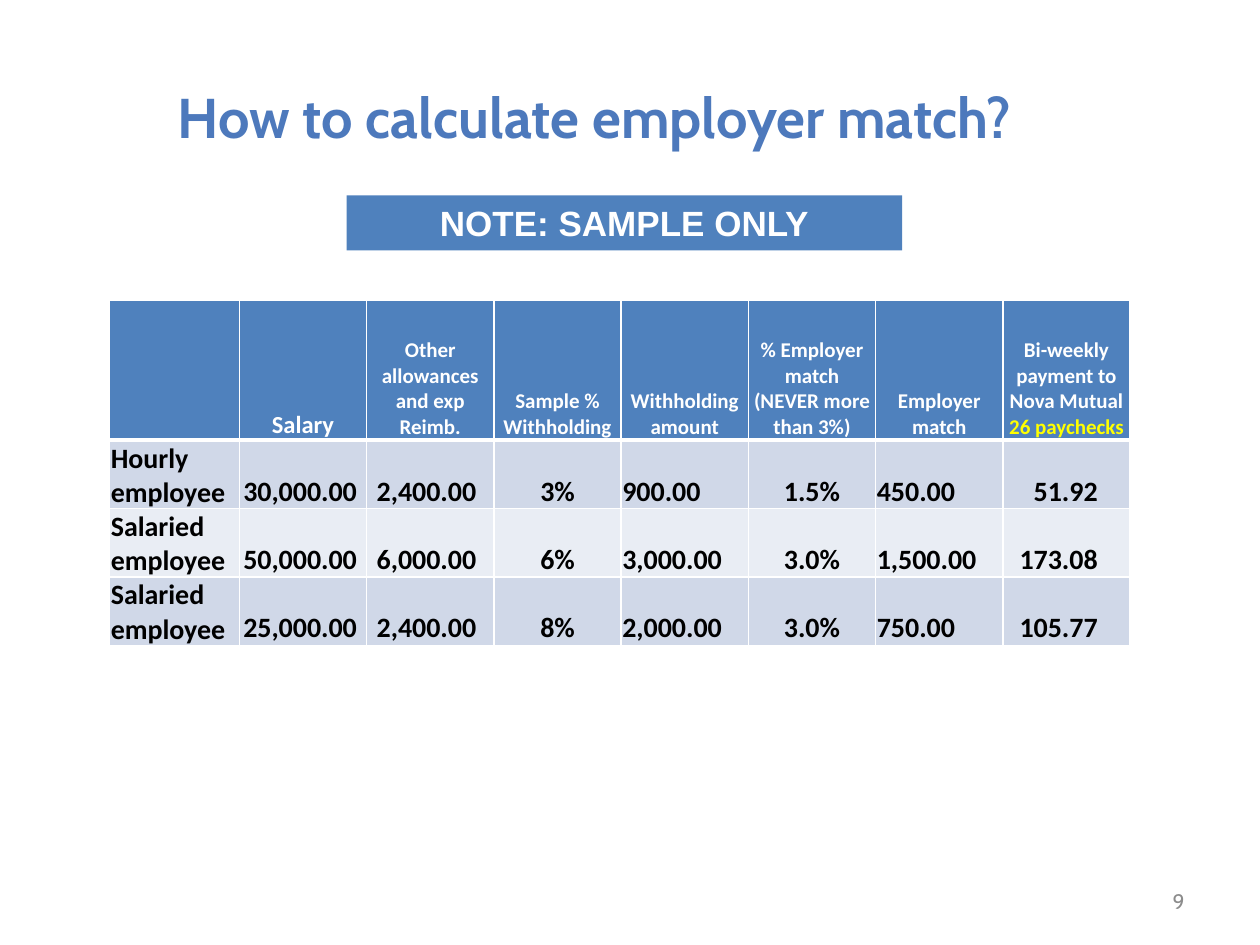
from dataclasses import dataclass

from lxml import etree
from pptx import Presentation
from pptx.dml.color import RGBColor
from pptx.enum import shapes, text
from pptx.oxml.ns import qn
from pptx.util import Pt

LEFT, CENTER, RIGHT = text.PP_ALIGN.LEFT, text.PP_ALIGN.CENTER, text.PP_ALIGN.RIGHT


@dataclass(frozen=True)
class Theme:
    blue: str = "4F81BD"
    title: str = "4D79BC"
    band_dark: str = "D0D8E8"
    band_light: str = "E9EDF4"
    white: str = "FFFFFF"
    black: str = "000000"
    yellow: str = "FFFF00"
    grey: str = "8C8C8C"
    heading_font: str = "Cabin"
    table_font: str = "Calibri"
    note_font: str = "Arial"
    title_size: int = 32
    note_size: int = 20
    body_size: int = 16
    salary_size: int = 14
    header_size: int = 12


@dataclass(frozen=True)
class Box:
    left: float
    top: float
    width: float
    height: float

    def emu(self) -> tuple:
        return Pt(self.left), Pt(self.top), Pt(self.width), Pt(self.height)


@dataclass(frozen=True)
class Style:
    font: str
    size: float
    color: str
    bold: bool = True


@dataclass(frozen=True)
class Column:
    header: str
    values: tuple
    align: int = CENTER
    inset_right: float = 0.72
    header_size: int = 12
    highlight: str = ""


T = Theme()
COLUMNS = [
    Column("", ("Hourly employee", "Salaried\nemployee", "Salaried\nemployee"), LEFT),
    Column("Salary", ("30,000.00", "50,000.00", "25,000.00"), inset_right=4,
           header_size=T.salary_size),
    Column("Other allowances and exp Reimb.", ("2,400.00", "6,000.00", "2,400.00"),
           inset_right=5),
    Column("Sample % Withholding", ("3%", "6%", "8%")),
    Column("Withholding amount", ("900.00", "3,000.00", "2,000.00"), LEFT),
    Column("% Employer match\n(NEVER more than 3%)", ("1.5%", "3.0%", "3.0%")),
    Column("Employer match", ("450.00", "1,500.00", "750.00"), LEFT),
    Column("Bi-weekly\npayment to Nova Mutual ", ("51.92", "173.08", "105.77"), RIGHT,
           inset_right=18.5, highlight="26 paychecks"),
]


def rgb(color: str) -> RGBColor:
    return RGBColor.from_string(color)


def style_run(r, style: Style) -> None:
    r.font.name = style.font
    r.font.size = Pt(style.size)
    r.font.bold = style.bold
    r.font.color.rgb = rgb(style.color)


def write(tf, content: str, style: Style, align: int) -> None:
    tf.text = content
    for p in tf.paragraphs:
        p.alignment = align
        for r in p.runs:
            style_run(r, style)


def add_label(s, box: Box, content: str, style: Style, align: int) -> None:
    tf = s.shapes.add_textbox(*box.emu()).text_frame
    tf.word_wrap = True
    tf.vertical_anchor = text.MSO_ANCHOR.MIDDLE
    write(tf, content, style, align)


def add_banner(s, box: Box, content: str, style: Style) -> None:
    sp = s.shapes.add_shape(shapes.MSO_SHAPE.RECTANGLE, *box.emu())
    sp.shadow.inherit = False
    sp.fill.solid()
    sp.fill.fore_color.rgb = rgb(T.blue)
    sp.line.fill.background()
    write(sp.text_frame, content, style, CENTER)


def set_borders(cell, top: float, bottom: float) -> None:
    tc_pr = cell._tc.get_or_add_tcPr()
    sides = (("a:lnL", 1), ("a:lnR", 1), ("a:lnT", top), ("a:lnB", bottom))
    for i, (tag, width) in enumerate(sides):
        ln = etree.Element(qn(tag), w=str(Pt(width)))
        fill = etree.SubElement(ln, qn("a:solidFill"))
        etree.SubElement(fill, qn("a:srgbClr"), val=T.white)
        tc_pr.insert(i, ln)


def fill_cell(cell, content: str, style: Style, align: int, fill: str,
              inset_right: float) -> None:
    cell.margin_left = cell.margin_top = Pt(0.72)
    cell.margin_right, cell.margin_bottom = Pt(inset_right), Pt(0)
    cell.vertical_anchor = text.MSO_ANCHOR.BOTTOM
    cell.fill.solid()
    cell.fill.fore_color.rgb = rgb(fill)
    write(cell.text_frame, content, style, align)


def add_match_table(s, box: Box, first_width: float, header_height: float) -> None:
    n_rows = 1 + len(COLUMNS[0].values)
    table = s.shapes.add_table(n_rows, len(COLUMNS), *box.emu()).table
    other_width = (box.width - first_width) / (len(COLUMNS) - 1)
    row_height = (box.height - header_height) / (n_rows - 1)
    for i, row in enumerate(table.rows):
        row.height = Pt(row_height if i else header_height)

    body = Style(T.table_font, T.body_size, T.black)
    for j, col in enumerate(COLUMNS):
        table.columns[j].width = Pt(other_width if j else first_width)

        # Header cell
        head = table.cell(0, j)
        fill_cell(head, col.header, Style(T.table_font, col.header_size, T.white),
                  CENTER, T.blue, 0.72)
        set_borders(head, 1, 3)
        if col.highlight:
            r = head.text_frame.paragraphs[-1].add_run()
            r.text = col.highlight
            style_run(r, Style(T.table_font, col.header_size, T.yellow))

        # Banded body cells
        for i, value in enumerate(col.values, start=1):
            cell = table.cell(i, j)
            band = T.band_dark if i % 2 else T.band_light
            fill_cell(cell, value, body, col.align, band, col.inset_right)
            set_borders(cell, 3 if i == 1 else 1, 1)


def main() -> None:
    prs = Presentation()
    prs.slide_width, prs.slide_height = Pt(720), Pt(540)
    s = prs.slides.add_slide(prs.slide_layouts[6])

    # Title
    add_label(s, Box(94.32, 21.6, 589.68, 90), "How to calculate employer match?",
              Style(T.heading_font, T.title_size, T.title), LEFT)

    # Sample table
    add_match_table(s, Box(62.64, 171.7, 583.2, 190), first_width=74.16,
                    header_height=79.84)

    # Slide number
    add_label(s, Box(516.24, 500.4, 167.76, 28.8), "9",
              Style(T.heading_font, T.header_size, T.grey, bold=False), RIGHT)

    # Note banner
    add_banner(s, Box(198, 111.6, 317.52, 31.5), "NOTE: SAMPLE ONLY",
               Style(T.note_font, T.note_size, T.white))

    prs.save("out.pptx")


if __name__ == "__main__":
    main()
